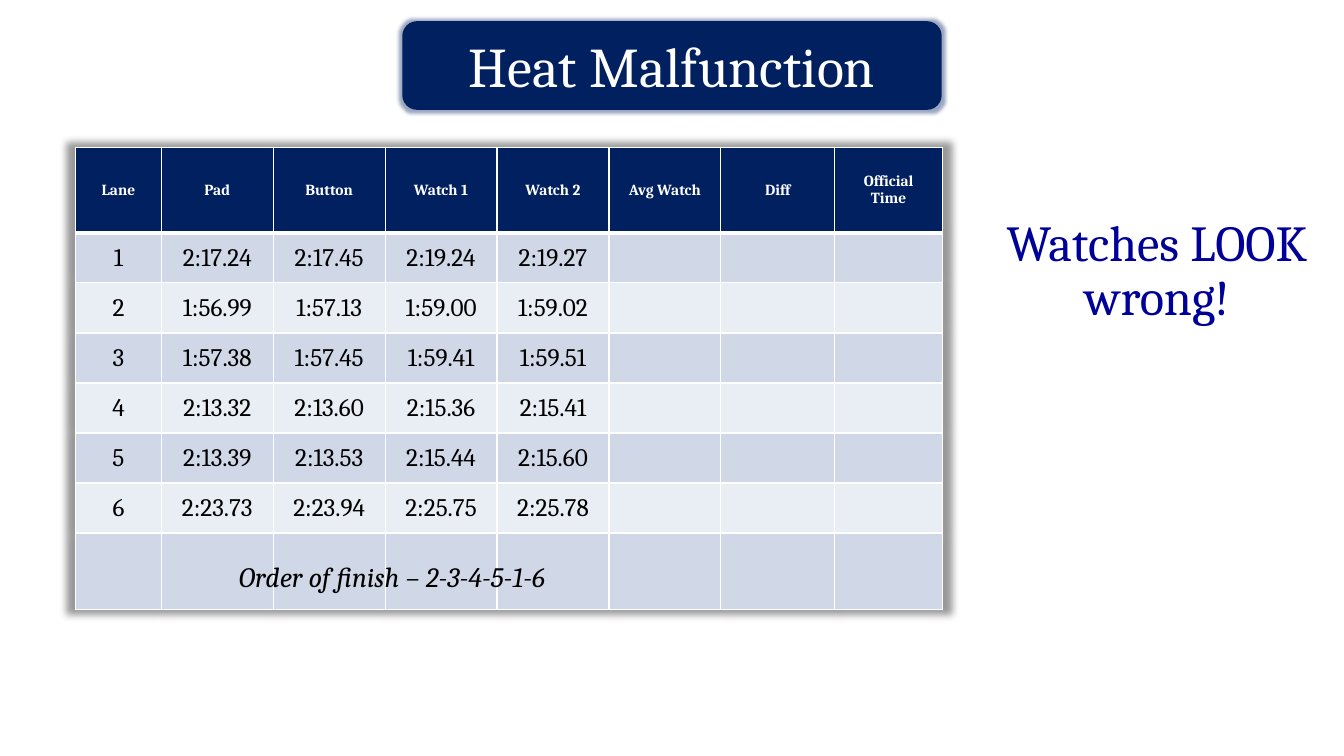
from lxml import etree
from pptx import Presentation
from pptx.dml.color import RGBColor
from pptx.enum.shapes import MSO_SHAPE
from pptx.enum.text import MSO_ANCHOR, PP_ALIGN
from pptx.oxml import parse_xml
from pptx.oxml.ns import nsdecls, qn
from pptx.util import Inches, Pt

NAVY = RGBColor(0x00, 0x20, 0x60)
BLUE = RGBColor(0x00, 0x00, 0x99)
BLACK = RGBColor(0x00, 0x00, 0x00)
WHITE = RGBColor(0xFF, 0xFF, 0xFF)
BANDS = (RGBColor(0xE9, 0xED, 0xF4), RGBColor(0xD0, 0xD8, 0xE8))

HEADER = ["Lane", "Pad", "Button", "Watch 1", "Watch 2", "Avg Watch", "Diff", "Official Time"]
TIMES = [
    ["1", "2:17.24", "2:17.45", "2:19.24", "2:19.27"],
    ["2", "1:56.99", "1:57.13", "1:59.00", "1:59.02"],
    ["3", "1:57.38", "1:57.45", "1:59.41", "1:59.51"],
    ["4", "2:13.32", "2:13.60", "2:15.36", "2:15.41"],
    ["5", "2:13.39", "2:13.53", "2:15.44", "2:15.60"],
    ["6", "2:23.73", "2:23.94", "2:25.75", "2:25.78"],
]
COLUMN_WIDTHS = [0.85] + [1.11] * 5 + [1.13, 1.07]
LANE_HEIGHT = 2.98 / len(TIMES)
ROW_HEIGHTS = [0.85] + [LANE_HEIGHT] * len(TIMES) + [0.76]

TABLE_EFFECT = (
    '<a:outerShdw blurRad="63500" sx="102000" sy="102000" algn="ctr" rotWithShape="0">'
    '<a:srgbClr val="000000"><a:alpha val="40000"/></a:srgbClr></a:outerShdw>'
)
TITLE_EFFECT = (
    f'<a:glow rad="63500"><a:srgbClr val="{NAVY}"><a:alpha val="40000"/></a:srgbClr></a:glow>'
    '<a:outerShdw blurRad="50800" dist="50800" dir="5400000">'
    f'<a:srgbClr val="{WHITE}"/></a:outerShdw>'
)


def effect_list(effects):
    return parse_xml(f'<a:effectLst {nsdecls("a")}>{effects}</a:effectLst>')


class HeatSlide:
    """Draws the elements of one slide in a shared style."""

    font_name = "Cambria"

    def __init__(self, presentation):
        self.slide = presentation.slides.add_slide(presentation.slide_layouts[6])

    def set_text(self, frame, text, size, color, align=PP_ALIGN.CENTER, bold=False, italic=False):
        frame.word_wrap = True
        paragraph = frame.paragraphs[0]
        paragraph.text = text
        paragraph.alignment = align
        font = paragraph.font
        font.name, font.size = self.font_name, Pt(size)
        font.bold, font.italic = bold, italic
        font.color.rgb = color
        return paragraph

    def text(self, box, text, size, color, **style):
        shape = self.slide.shapes.add_textbox(*map(Inches, box))
        return self.set_text(shape.text_frame, text, size, color, **style)

    def title(self, box, text):
        shape = self.slide.shapes.add_shape(MSO_SHAPE.ROUNDED_RECTANGLE, *map(Inches, box))
        shape.fill.solid()
        shape.fill.fore_color.rgb = NAVY
        shape.line.fill.background()
        shape._element.spPr.append(effect_list(TITLE_EFFECT))
        shape.text_frame.vertical_anchor = MSO_ANCHOR.MIDDLE
        self.set_text(shape.text_frame, text, 40, WHITE)

    def borders(self, cell, top, bottom):
        properties = cell._tc.get_or_add_tcPr()
        for index, (side, width) in enumerate(zip("LRTB", (1, 1, top, bottom))):
            line = etree.Element(qn(f"a:ln{side}"), w=str(Pt(width)))
            fill = etree.SubElement(line, qn("a:solidFill"))
            etree.SubElement(fill, qn("a:srgbClr"), val=str(WHITE))
            properties.insert(index, line)

    def table(self, box, rows):
        frame = self.slide.shapes.add_table(len(rows), len(HEADER), *map(Inches, box))
        table = frame.table
        table._tbl.tblPr.insert(0, effect_list(TABLE_EFFECT))
        for column, width in zip(table.columns, COLUMN_WIDTHS):
            column.width = Inches(width)
        for row, height in zip(table.rows, ROW_HEIGHTS):
            row.height = Inches(height)
        for row_index, values in enumerate(rows):
            is_header = row_index == 0
            for column_index in range(len(HEADER)):
                cell = table.cell(row_index, column_index)
                cell.vertical_anchor = MSO_ANCHOR.MIDDLE
                cell.fill.solid()
                cell.fill.fore_color.rgb = NAVY if is_header else BANDS[row_index % 2]
                self.borders(cell, 3 if row_index == 1 else 1, 3 if is_header else 1)
                if column_index < len(values):
                    self.set_text(cell.text_frame, values[column_index], 11 if is_header else 18,
                                  WHITE if is_header else BLACK, bold=is_header)


def main():
    presentation = Presentation()
    presentation.slide_width = Inches(13.33)
    presentation.slide_height = Inches(7.5)
    heat = HeatSlide(presentation)
    heat.table((0.75, 1.46, 8.59, 4.59), [HEADER, *TIMES, []])
    heat.text((2.27, 5.5, 4.15, 0.38), "Order of finish – 2-3-4-5-1-6", 20, BLACK,
              align=PP_ALIGN.LEFT, italic=True)
    warning = heat.text((9.62, 2.11, 3.71, 1.2), "Watches LOOK wrong!", 36, BLUE)
    warning.line_spacing = 0.9
    heat.title((3.99, 0.21, 5.35, 0.88), "Heat Malfunction")
    presentation.save("out.pptx")


if __name__ == "__main__":
    main()
